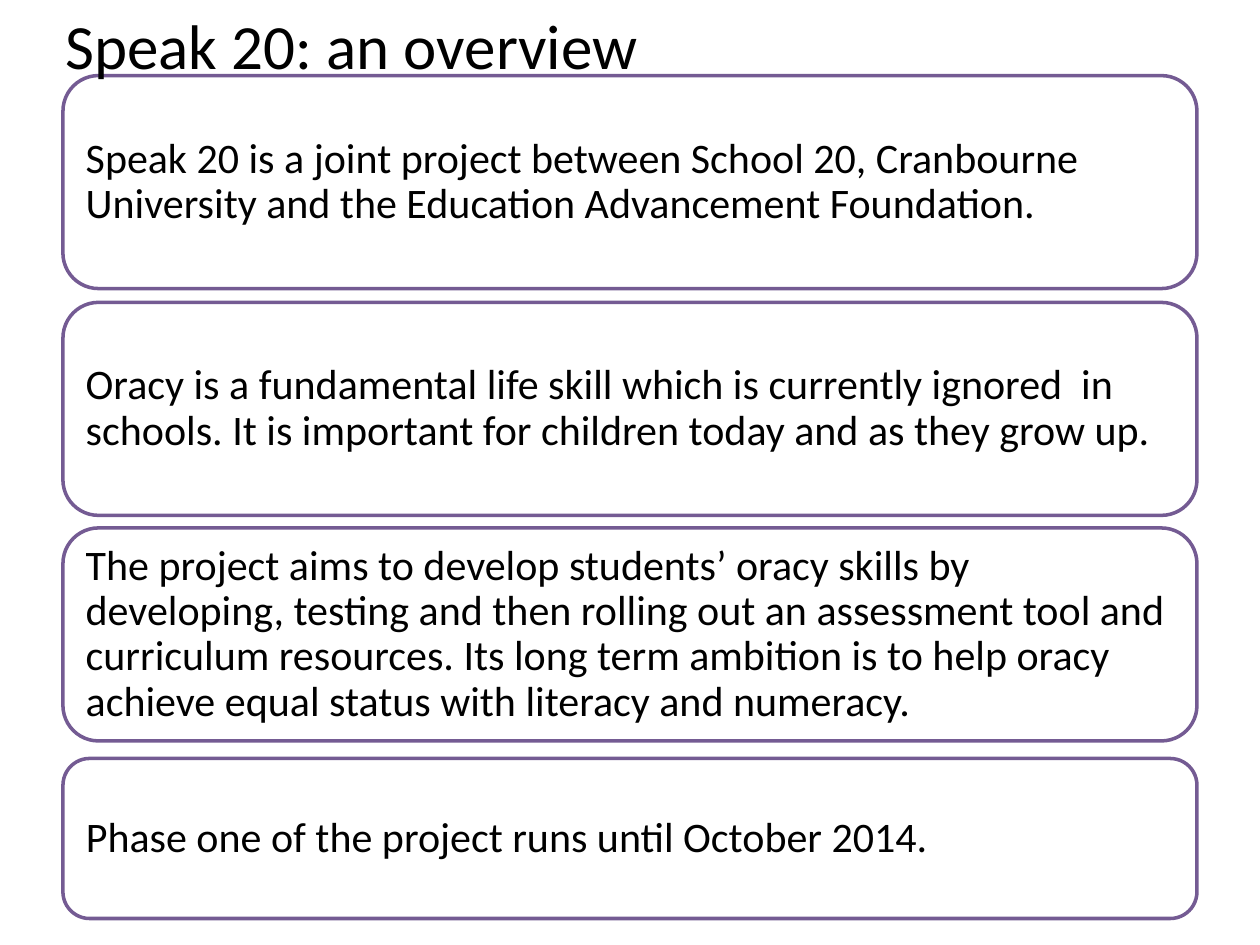
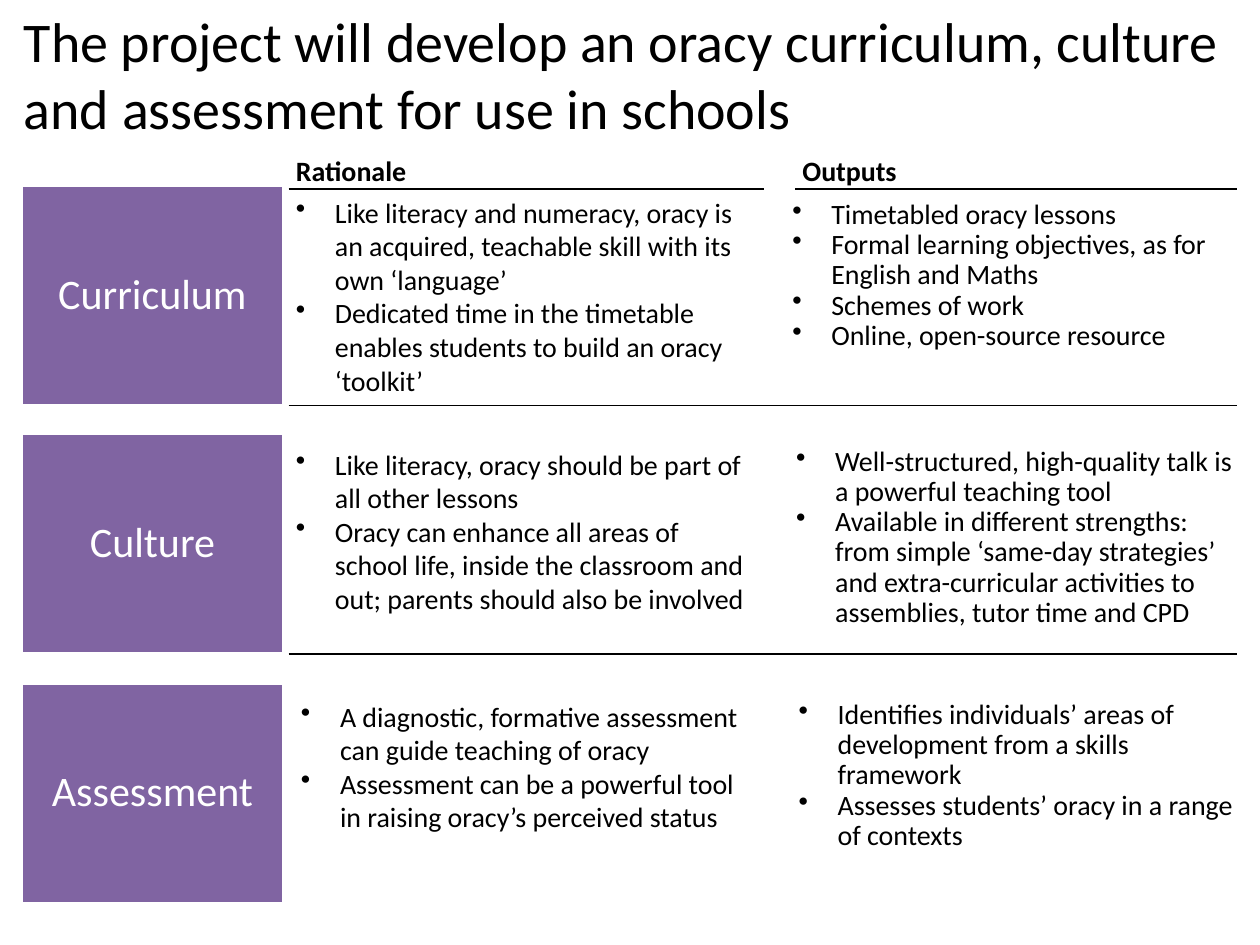
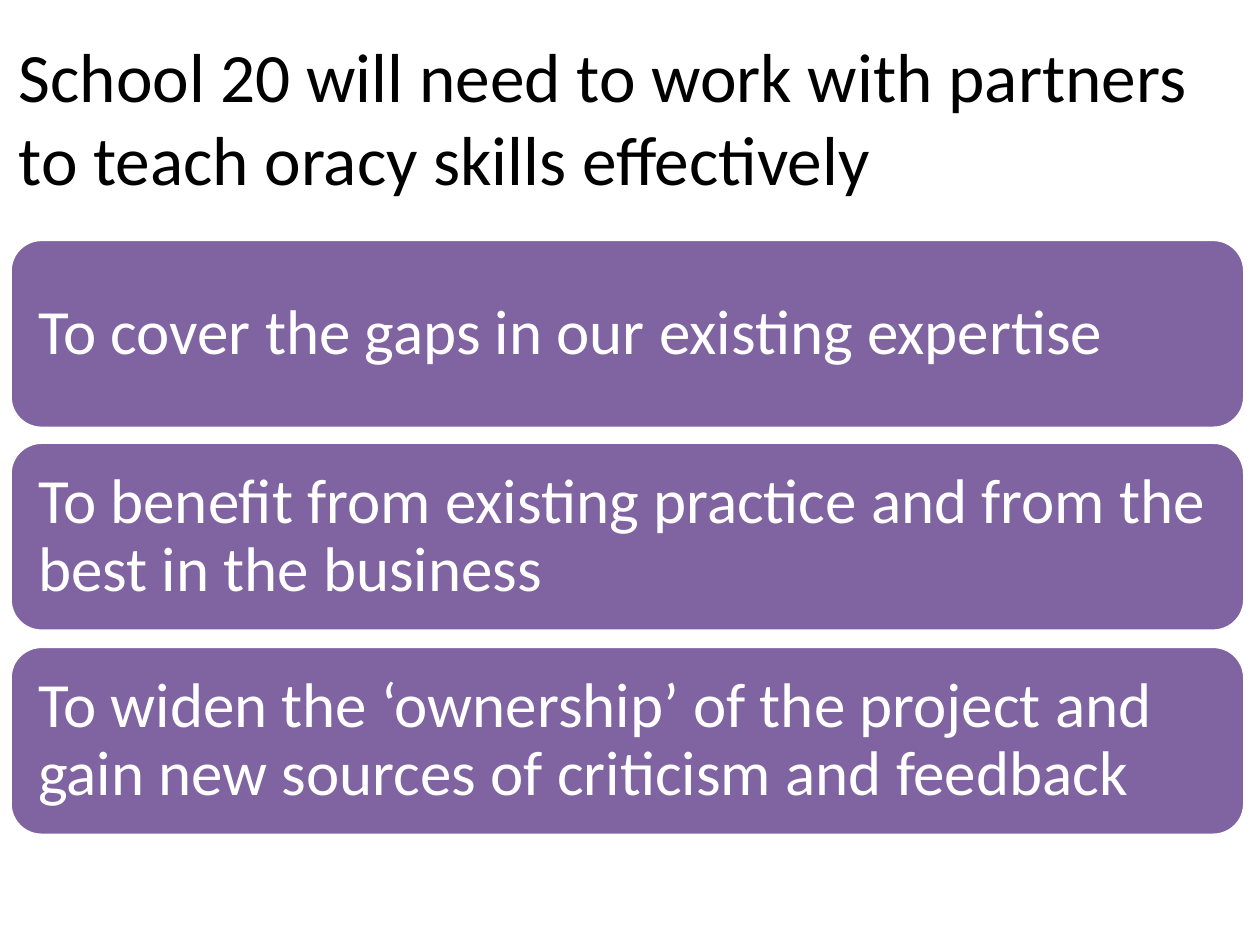
from lxml import etree
from pptx import Presentation
from pptx import util as u
from pptx.dml.color import RGBColor
from pptx.enum import shapes, text
from pptx.oxml import ns

PX = 9144
FONT = "Calibri"
COLORS = {
    "ink": "000000",
    "paper": "FFFFFF",
    "purple": "8064A2",
    "outline": "745B93",
}


def px(length):
    return u.Emu(length * PX)


def color(name):
    return RGBColor.from_string(COLORS[name])


class Deck:
    def __init__(self):
        self.deck = Presentation()
        self.deck.slide_width = px(1000)
        self.deck.slide_height = px(750)
        self.page = None

    def new_page(self):
        self.page = self.deck.slides.add_slide(self.deck.slide_layouts[6])

    def fill_text(self, box, lines, size, ink="ink", bold=False, spacing=1.0,
                  align="LEFT", anchor="TOP", margins=(10, 5), bullets=False):
        frame = box.text_frame
        frame.word_wrap = True
        frame.vertical_anchor = text.MSO_ANCHOR[anchor]
        frame.margin_left = frame.margin_right = px(margins[0])
        frame.margin_top = frame.margin_bottom = px(margins[1])
        for index, line in enumerate(lines):
            para = frame.add_paragraph() if index else frame.paragraphs[0]
            para.text = line
            para.alignment = text.PP_ALIGN[align]
            para.line_spacing = spacing
            para.font.name = FONT
            para.font.size = u.Pt(size)
            para.font.bold = bold
            para.font.color.rgb = color(ink)
            if bullets:
                self.bullet(para)

    def bullet(self, para):
        properties = para._p.get_or_add_pPr()
        properties.set("marL", str(px(31)))
        properties.set("indent", str(px(-31)))
        mark = etree.Element(ns.qn("a:buChar"), char="•")
        properties.find(ns.qn("a:defRPr")).addprevious(mark)

    def text(self, left, top, width, height, lines, size, **style):
        box = self.page.shapes.add_textbox(px(left), px(top), px(width), px(height))
        self.fill_text(box, lines, size, **style)

    def title(self, left, top, width, height, words, size, anchor="TOP"):
        self.text(left, top, width, height, [words], size, anchor=anchor)

    def bullets(self, left, top, width, height, lines, **style):
        self.text(left, top, width, height, lines, 16, bullets=True, **style)

    def panel(self, left, top, width, height, words, size, inset, fill="purple",
              line="paper", ink="paper", align="LEFT", rounded=True):
        kind = "ROUNDED_RECTANGLE" if rounded else "RECTANGLE"
        box = self.page.shapes.add_shape(
            shapes.MSO_SHAPE[kind], px(left), px(top), px(width), px(height))
        box.shadow.inherit = False
        box.fill.solid()
        box.fill.fore_color.rgb = color(fill)
        box.line.color.rgb = color(line)
        box.line.width = u.Pt(2)
        corner = round(height / 6 * 0.29) if rounded else 0
        margin = inset - corner
        self.fill_text(box, [words], size, ink=ink, spacing=0.9, align=align,
                       anchor="MIDDLE", margins=(margin, margin))

    def rule(self, left, right, y):
        line = self.page.shapes.add_connector(
            shapes.MSO_CONNECTOR.STRAIGHT, px(left), px(y), px(right), px(y))
        line.line.color.rgb = color("ink")
        line.line.width = u.Pt(0.75)
        etree.SubElement(line._element.spPr, ns.qn("a:effectLst"))


def overview(deck):
    deck.new_page()
    cards = [
        (60, 169, "Speak 20 is a joint project between School 20, Cranbourne "
                  "University and the Education Advancement Foundation."),
        (240, 169, "Oracy is a fundamental life skill which is currently ignored  in "
                   "schools. It is important for children today and as they grow up."),
        (419, 169, "The project aims to develop students’ oracy skills by developing, "
                   "testing and then rolling out an assessment tool and curriculum "
                   "resources. Its long term ambition is to help oracy achieve equal "
                   "status with literacy and numeracy."),
        (602, 127, "Phase one of the project runs until October 2014."),
    ]
    for top, height, words in cards:
        deck.panel(50, top, 900, height, words, 24, inset=18,
                   fill="paper", line="outline", ink="ink")
    deck.title(42, 0, 950, 60, "Speak 20: an overview", 36)


def strands(deck):
    deck.new_page()
    deck.title(9, 0, 991, 108, "The project will develop an oracy curriculum, culture "
                               "and assessment for use in schools", 32)
    rows = [
        ("Curriculum", 147, (225, 150), [
            "Like literacy and numeracy, oracy is an acquired, teachable skill "
            "with its own ‘language’",
            "Dedicated time in the timetable enables students to build an oracy ‘toolkit’",
        ], (619, 154, 366), [
            "Timetabled oracy lessons",
            "Formal learning objectives, as for English and Maths",
            "Schemes of work",
            "Online, open-source resource",
        ]),
        ("Culture", 344, (225, 350), [
            "Like literacy, oracy should be part of all other lessons",
            "Oracy can enhance all areas of school life, inside the classroom and "
            "out; parents should also be involved",
        ], (622, 350, 378), [
            "Well-structured, high-quality talk is a powerful teaching tool",
            "Available in different strengths: from simple ‘same-day strategies’ and "
            "extra-curricular activities to assemblies, tutor time and CPD",
        ]),
        ("Assessment", 542, (229, 550), [
            "A diagnostic, formative assessment can guide teaching of oracy",
            "Assessment can be a powerful tool in raising oracy’s perceived status",
        ], (624, 551, 376), [
            "Identifies individuals’ areas of development from a skills framework",
            "Assesses students’ oracy in a range of contexts",
        ]),
    ]
    for name, top, reason_at, reasons, (left, output_top, width), outputs in rows:
        deck.panel(17, top, 208, 175, name, 24, inset=10, align="CENTER", rounded=False)
        deck.bullets(*reason_at, 381, 172, reasons)
        deck.bullets(left, output_top, width, 156, outputs, spacing=0.9)
    for left, width, heading in ((225, 381, "Rationale"), (627, 131, "Outputs")):
        deck.text(left, 117, width, 37, [heading], 16, bold=True)
    for left, right, y in ((229, 606, 150), (631, 982, 150),
                           (229, 982, 322), (229, 982, 519)):
        deck.rule(left, right, y)


def partners(deck):
    deck.new_page()
    deck.title(5, 30, 990, 125, "School 20 will need to work with partners to teach "
                                "oracy skills effectively", 39.6, anchor="MIDDLE")
    benefits = [
        "To cover the gaps in our existing expertise",
        "To benefit from existing practice and from the best in the business",
        "To widen the ‘ownership’ of the project and gain new sources of "
        "criticism and feedback",
    ]
    for index, words in enumerate(benefits):
        deck.panel(8, 190 + index * 323 // 2, 980, 150, words, 36, inset=22)


def main():
    deck = Deck()
    overview(deck)
    strands(deck)
    partners(deck)
    deck.deck.save("out.pptx")


if __name__ == "__main__":
    main()
